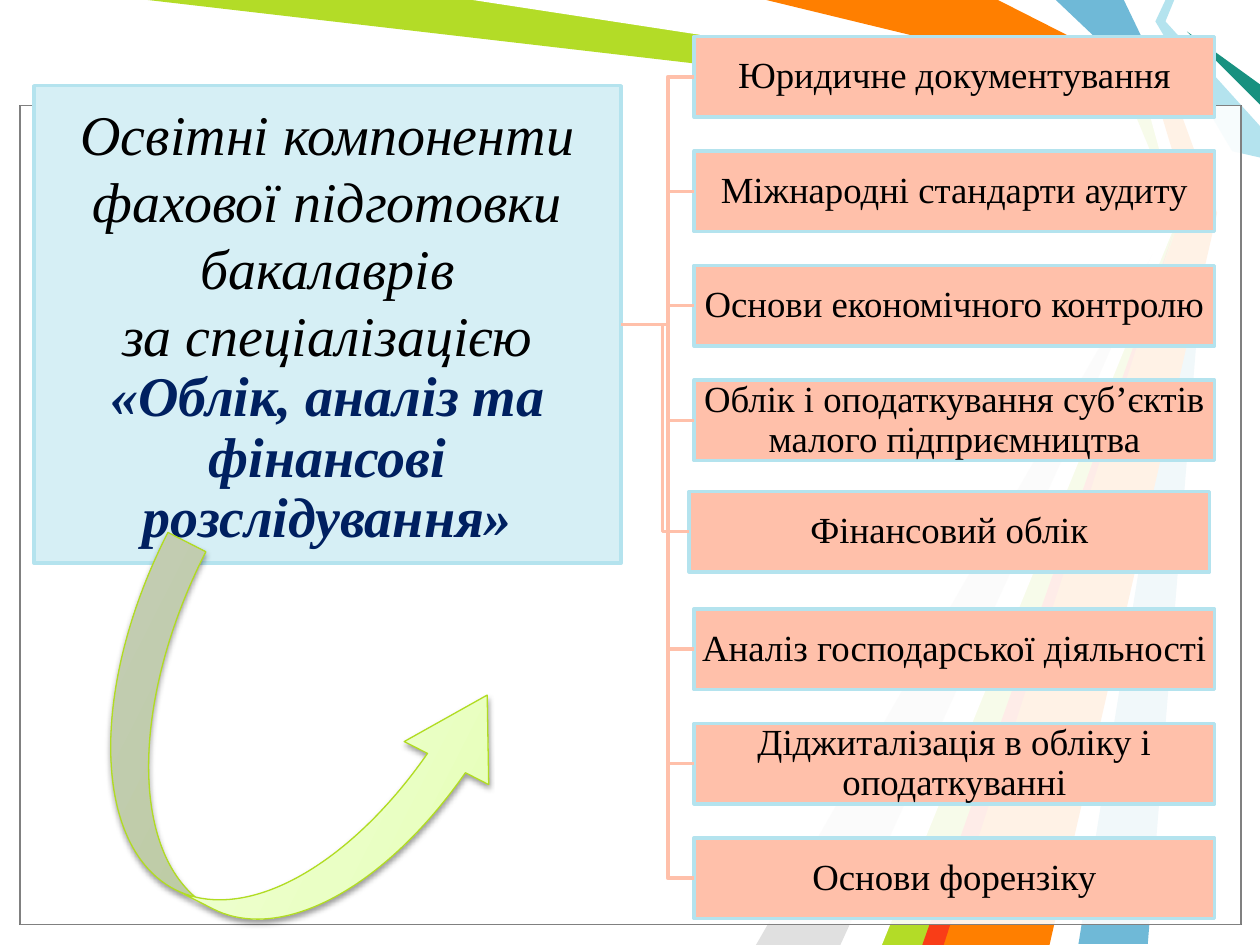
import lxml.etree
import pptx
import pptx.dml.color
import pptx.enum.dml
import pptx.enum.shapes
import pptx.enum.text
import pptx.oxml
import pptx.oxml.ns
import pptx.util

Inches, Pt = pptx.util.Inches, pptx.util.Pt
MSO_SHAPE = pptx.enum.shapes.MSO_SHAPE
qn = pptx.oxml.ns.qn
A_NS = pptx.oxml.ns.nsdecls("a")

SALMON, PALE_BLUE, EDGE_BLUE = "FFC0AA", "D6EFF5", "B4E3EE"


def paint(fill, color, alpha=None):
    """Make a shape, line or font fill solid; alpha is opacity in percent."""
    fill.solid()
    fill.fore_color.rgb = pptx.dml.color.RGBColor.from_string(color)
    if alpha is not None:
        node = fill.fore_color._xFill.find(qn("a:srgbClr"))
        lxml.etree.SubElement(node, qn("a:alpha")).set("val", str(alpha * 1000))


def write(p, text, size, color="000000", bold=False, italic=False, spacing=0.9):
    p.alignment = pptx.enum.text.PP_ALIGN.CENTER
    p.line_spacing = spacing
    p.space_before = p.space_after = Pt(0)
    r = p.add_run()
    r.text = text
    r.font.name = "Times New Roman"
    r.font.size = Pt(size)
    r.font.bold, r.font.italic = bold, italic
    paint(r.font.fill, color)


prs = pptx.Presentation()
prs.slide_width, prs.slide_height = Inches(10), Inches(7.5)
s = prs.slides.add_slide(prs.slide_layouts[5])

# Background ribbons, back to front
ribbons = [
    ("6FB9D7", [(8.92, 0), (9.29, 0.77), (9.58, 1.67), (9.11, 7.49), (8.56, 7.49),
                (9.5, 1.67), (9.17, 0.75), (8.38, 0)]),
    ("B3DC27", [(1.17, 0), (3.83, 0), (9.14, 0.78), (9.42, 1.69), (7.42, 7.5),
                (6.92, 7.5), (9.35, 1.73), (9.01, 0.91)]),
    ("E0E0E0", [(6.67, 7.5), (9.27, 1.81), (6, 7.5)]),
    ("FFFFFF", [(3.75, 0), (9.1, 0.82), (9.32, 1.62), (6.75, 7.5), (7, 7.5),
                (9.41, 1.58), (9.17, 0.75), (6, 0)]),
    ("B4E3EE", [(9.25, 0), (9.17, 0.17), (9.78, 1.2), (10, 1.25), (10, 1),
                (9.25, 0.17), (9.32, 0)]),
    ("189180", [(10, 0.83), (9.42, 0.25), (10, 0.67)]),
    ("FF7F00", [(6.08, 0), (7.92, 0), (9.3, 0.7), (9.66, 1.69), (8.33, 7.5),
                (7.33, 7.5), (9.42, 1.58), (9.17, 0.75)]),
    ("F93D17", [(7.32, 7.5), (9.32, 1.83), (7.49, 7.5)]),
]
for color, points in ribbons:
    points = [(Inches(x), Inches(y)) for x, y in points]
    builder = s.shapes.build_freeform(*points[0])
    builder.add_line_segments(points[1:], close=True)
    sp = builder.convert_to_shape()
    sp.shadow.inherit = False
    paint(sp.fill, color)
    sp.line.fill.background()

# Two translucent panels, then a white strip over their top edge
for box, alpha, edge in [
    ((0.16, 0.84, 9.69, 6.5), 69, "000000"),
    ((0.16, 0.84, 9.69, 6.5), 69, "808080"),
    ((0.42, 0.74, 6.83, 0.17), None, None),
]:
    sp = s.shapes.add_shape(MSO_SHAPE.RECTANGLE, *map(Inches, box))
    sp.shadow.inherit = False
    paint(sp.fill, "FFFFFF", alpha)
    if edge:
        paint(sp.line.fill, edge)
        sp.line.width = Pt(0.75)
    else:
        sp.line.fill.background()

# Title box, brought in front of the background
title = s.shapes.title
title.element.getparent().append(title.element)
title.left, title.top = Inches(0.27), Inches(0.68)
title.width, title.height = Inches(4.66), Inches(3.79)
paint(title.fill, PALE_BLUE)
paint(title.line.fill, EDGE_BLUE)
title.line.width = Pt(2)
tf = title.text_frame
tf.word_wrap = True
tf.auto_size = pptx.enum.text.MSO_AUTO_SIZE.NONE
tf.vertical_anchor = pptx.enum.text.MSO_ANCHOR.MIDDLE
tf.margin_left = tf.margin_right = tf.margin_top = tf.margin_bottom = Inches(0.02)
write(tf.paragraphs[0], "Освітні компоненти фахової підготовки бакалаврів", 32,
      italic=True, spacing=1.0)
write(tf.add_paragraph(), "за спеціалізацією", 32, italic=True, spacing=1.0)
write(tf.add_paragraph(), "«Облік, аналіз та фінансові розслідування»", 32,
      color="002060", bold=True, italic=True)

# Course boxes, each joined to the title box
courses = [
    "Юридичне документування",
    "Міжнародні стандарти аудиту",
    "Основи економічного контролю",
    "Облік і оподаткування суб’єктів малого підприємництва",
    "Фінансовий облік",
    "Аналіз господарської діяльності",
    "Діджиталізація в обліку і оподаткуванні",
    "Основи форензіку",
]
first_top, last_top = 0.29, 6.65
pitch = (last_top - first_top) / (len(courses) - 1)
elbow_to_box = Inches(0.21)
for i, course in enumerate(courses):
    left, top = 5.51, first_top + i * pitch
    if course == "Фінансовий облік":
        left, top = 5.47, 3.9
    sp = s.shapes.add_shape(MSO_SHAPE.RECTANGLE, Inches(left), Inches(top),
                            Inches(4.13), Inches(0.64))
    sp.shadow.inherit = False
    paint(sp.fill, SALMON)
    paint(sp.line.fill, EDGE_BLUE)
    sp.line.width = Pt(2)
    tf = sp.text_frame
    tf.word_wrap = True
    tf.vertical_anchor = pptx.enum.text.MSO_ANCHOR.MIDDLE
    tf.margin_left = tf.margin_right = tf.margin_top = tf.margin_bottom = Inches(0.01)
    write(tf.paragraphs[0], course, 21)

    link = s.shapes.add_connector(pptx.enum.shapes.MSO_CONNECTOR.ELBOW, 0, 0, 0, 0)
    link.begin_connect(title, 3)
    link.end_connect(sp, 1)
    paint(link.line.fill, SALMON)
    link.line.width = Pt(2)
    sp_pr = link.element.spPr
    lxml.etree.SubElement(sp_pr, qn("a:effectLst"))
    bend = round(100000 * (link.width - elbow_to_box) / link.width)
    guide = lxml.etree.SubElement(sp_pr.find(qn("a:prstGeom")).find(qn("a:avLst")), qn("a:gd"))
    guide.set("name", "adj1")
    guide.set("fmla", f"val {bend}")

# Curved arrow from the title towards the courses
arrow = s.shapes.add_shape(MSO_SHAPE.CURVED_RIGHT_ARROW, Inches(0.95), Inches(4.46),
                           Inches(2.5), Inches(3.22))
arrow.rotation = 297
for i, value in enumerate((0.135, 0.301, 0.251)):
    arrow.adjustments[i] = value
stops = "".join(f'<a:gs pos="{pos}"><a:srgbClr val="{color}"/></a:gs>' for pos, color in
                [(0, "E2FFAD"), (35000, "EAFFC5"), (100000, "F7FFE9")])
sp_pr = arrow.element.spPr
sp_pr.append(pptx.oxml.parse_xml(
    f'<a:gradFill {A_NS} rotWithShape="1"><a:gsLst>{stops}</a:gsLst>'
    '<a:lin ang="16200000" scaled="1"/></a:gradFill>'))
paint(arrow.line.fill, "B1DC22")
arrow.line.width = Pt(0.75)
arrow.shadow.inherit = False
sp_pr.find(qn("a:effectLst")).append(pptx.oxml.parse_xml(
    f'<a:outerShdw {A_NS} blurRad="40000" dist="20000" dir="5400000" rotWithShape="0">'
    '<a:srgbClr val="000000"><a:alpha val="38000"/></a:srgbClr></a:outerShdw>'))

prs.save("out.pptx")
